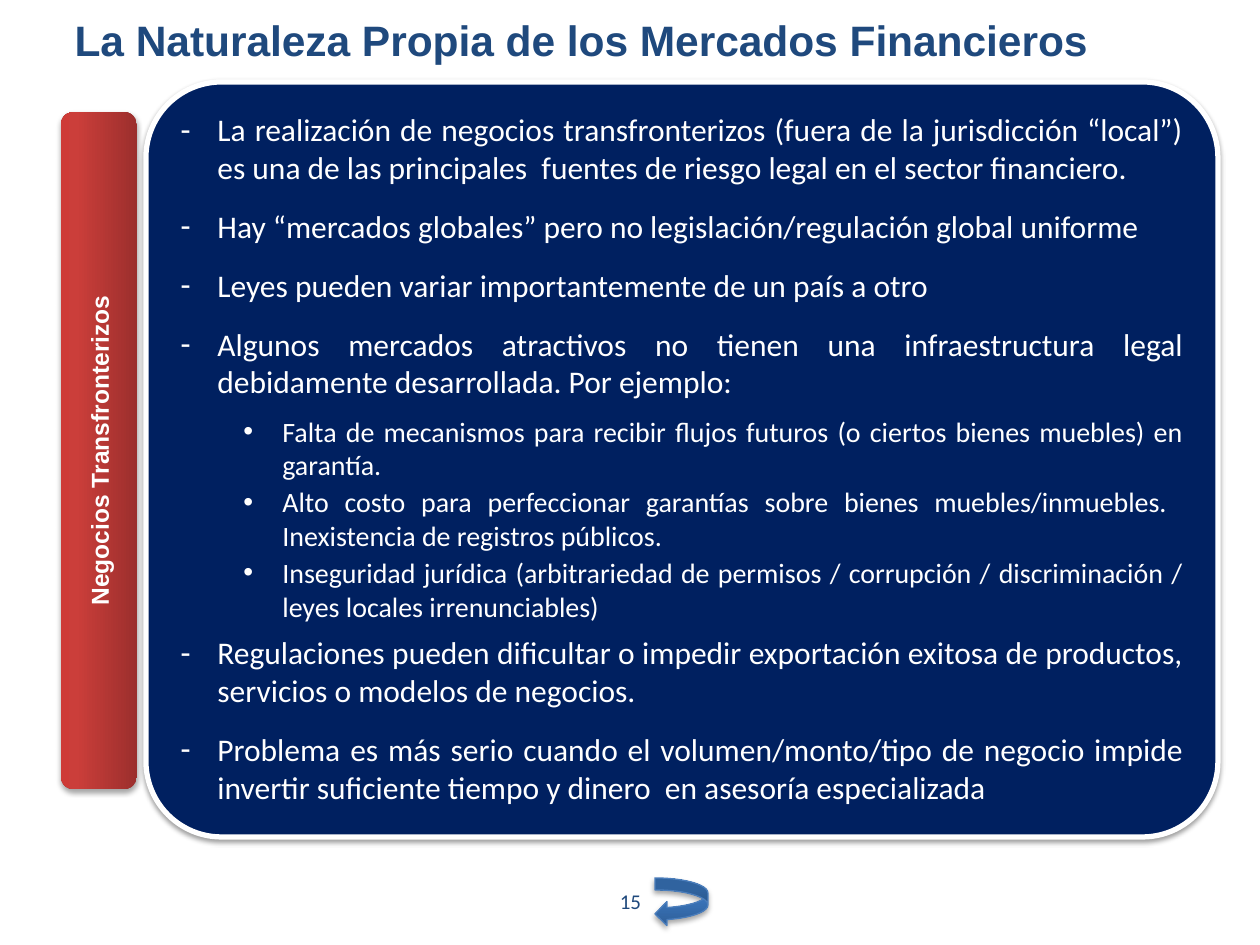
from copy import deepcopy

from lxml import etree
from pptx import Presentation
from pptx.dml.color import RGBColor
from pptx.enum.shapes import MSO_SHAPE
from pptx.enum.text import MSO_ANCHOR, MSO_AUTO_SIZE, PP_ALIGN
from pptx.oxml.ns import qn
from pptx.util import Emu, Pt

ROUNDED = MSO_SHAPE.ROUNDED_RECTANGLE
CURVED_ARROW = MSO_SHAPE.CURVED_LEFT_ARROW
MIDDLE = MSO_ANCHOR.MIDDLE
TOP = MSO_ANCHOR.TOP
NO_AUTOFIT = MSO_AUTO_SIZE.NONE
LEFT, CENTER, JUSTIFY = PP_ALIGN.LEFT, PP_ALIGN.CENTER, PP_ALIGN.JUSTIFY

PX_PER_INCH = 126
WHITE, NAVY, BLUE = "FFFFFF", "002060", "1F497D"
RED_STOPS = [(0, "9C2F2D"), (80, "CB3E3A"), (100, "CE3B37")]
BLUE_STOPS = [(0, "2F5F99"), (80, "3D7CC7"), (100, "3A7CCB")]

LEVELS = [
    {"bullet": "-", "size": 18, "margin": 37, "hanging": 37,
     "spacing": {"space_before": Pt(6), "space_after": Pt(6)}},
    {"bullet": "•", "size": 16, "margin": 102, "hanging": 39,
     "spacing": {"space_before": Pt(2), "space_after": Pt(0)}},
]
POINTS = [
    (0, "La realización de negocios transfronterizos (fuera de la jurisdicción “local”) "
        "es una de las principales  fuentes de riesgo legal en el sector financiero."),
    (0, "Hay “mercados globales” pero no legislación/regulación global uniforme"),
    (0, "Leyes pueden variar importantemente de un país a otro"),
    (0, "Algunos mercados atractivos no tienen una infraestructura legal "
        "debidamente desarrollada. Por ejemplo:"),
    (1, "Falta de mecanismos para recibir flujos futuros (o ciertos bienes muebles) "
        "en garantía."),
    (1, "Alto costo para perfeccionar garantías sobre bienes muebles/inmuebles.  "
        "Inexistencia de registros públicos."),
    (1, "Inseguridad jurídica (arbitrariedad de permisos / corrupción / discriminación / "
        "leyes locales irrenunciables)"),
    (0, "Regulaciones pueden dificultar o impedir exportación exitosa de productos, "
        "servicios o modelos de negocios."),
    (0, "Problema es más serio cuando el volumen/monto/tipo de negocio impide "
        "invertir suficiente tiempo y dinero  en asesoría especializada"),
]


def px(length):
    return Emu(round(length * 914400 / PX_PER_INCH))


def color(value):
    return RGBColor.from_string(value)


def apply(target, values):
    for name, value in values.items():
        setattr(target, name, value)


def write(paragraph, text, size, font, ink, align, bold=False):
    paragraph.alignment = align
    run = paragraph.add_run()
    run.text = text
    apply(run.font, {"size": Pt(size), "name": font, "bold": bold})
    run.font.color.rgb = color(ink)


def add_shadow(shape, opacity, distance):
    shape.shadow.inherit = False
    effects = shape._element.spPr.find(qn("a:effectLst"))
    shadow = etree.SubElement(
        effects, qn("a:outerShdw"), blurRad=str(Pt(3.1)), dist=str(Pt(distance)),
        dir="5400000", rotWithShape="0")
    tint = etree.SubElement(shadow, qn("a:srgbClr"), val="000000")
    etree.SubElement(tint, qn("a:alpha"), val=str(opacity * 1000))


def fill_gradient(shape, stops):
    shape.fill.gradient()
    shape.fill.gradient_angle = 90
    stop_list = shape._element.spPr.find(qn("a:gradFill")).find(qn("a:gsLst"))
    stop_list.append(deepcopy(stop_list[-1]))
    for stop, (position, value) in zip(shape.fill.gradient_stops, stops):
        stop.position = position / 100
        stop.color.rgb = color(value)


def set_bullet(paragraph, level):
    properties = paragraph._p.get_or_add_pPr()
    properties.set("marL", str(px(level["margin"])))
    properties.set("indent", str(-px(level["hanging"])))
    etree.SubElement(properties, qn("a:buFont"), typeface="Arial")
    etree.SubElement(properties, qn("a:buChar"), char=level["bullet"])


def place_title(slide, x, y, w, h):
    title = slide.shapes.title
    apply(title, {"left": px(x), "top": px(y), "width": px(w), "height": px(h)})
    apply(title.text_frame, {"auto_size": NO_AUTOFIT, "vertical_anchor": MIDDLE,
                             "word_wrap": True})
    heading = title.text_frame.paragraphs[0]
    write(heading, "La Naturaleza Propia de los Mercados Financieros",
          24.3, "Arial", BLUE, LEFT, True)
    heading.add_line_break()
    heading.font.size = Pt(24.3)


def add_panel(slide, x, y, w, h):
    panel = slide.shapes.add_shape(ROUNDED, px(x), px(y), px(w), px(h))
    panel.adjustments[0] = 0.1
    panel.fill.solid()
    panel.fill.fore_color.rgb = color(NAVY)
    panel.line.color.rgb = color(WHITE)
    panel.line.width = Pt(3)
    add_shadow(panel, 38, 1.6)
    frame = panel.text_frame
    apply(frame, {"word_wrap": True, "vertical_anchor": TOP})
    for index, (depth, text) in enumerate(POINTS):
        point = frame.add_paragraph() if index else frame.paragraphs[0]
        level = LEVELS[depth]
        point.level = depth
        apply(point, level["spacing"])
        if index == 0:
            point.space_before = Pt(0)
        set_bullet(point, level)
        write(point, text, level["size"], "Calibri", WHITE, JUSTIFY)


def add_side_bar(slide, x, y, w, h):
    shift = (h - w) / 2
    bar = slide.shapes.add_shape(ROUNDED, px(x - shift), px(y + shift), px(h), px(w))
    bar.rotation = 270
    fill_gradient(bar, RED_STOPS)
    bar.line.fill.background()
    add_shadow(bar, 35, 1.8)
    bar.text_frame.vertical_anchor = MIDDLE
    write(bar.text_frame.paragraphs[0], "Negocios Transfronterizos",
          14, "Arial", WHITE, CENTER, True)


def add_footer(slide, x, y, w, h):
    number = slide.shapes.add_textbox(px(x), px(y), px(w), px(h))
    apply(number.text_frame, {"word_wrap": True, "vertical_anchor": MIDDLE})
    write(number.text_frame.paragraphs[0], "15", 12, "Calibri", BLUE, CENTER)
    arrow = slide.shapes.add_shape(CURVED_ARROW, px(x + 224), px(y + 2), px(53), px(48))
    fill_gradient(arrow, BLUE_STOPS)
    arrow.line.color.rgb = color("4B7EBC")
    arrow.line.width = Pt(0.75)
    add_shadow(arrow, 35, 1.8)


def main():
    deck = Presentation()
    deck.slide_width, deck.slide_height = px(1260), px(945)
    slide = deck.slides.add_slide(deck.slide_layouts[5])
    place_title(slide, 62, 8, 1134, 115)
    add_panel(slide, 146, 82, 1072, 755)
    add_side_bar(slide, 61, 112, 76, 677)
    add_footer(slide, 431, 876, 399, 50)
    deck.save("out.pptx")


if __name__ == "__main__":
    main()
